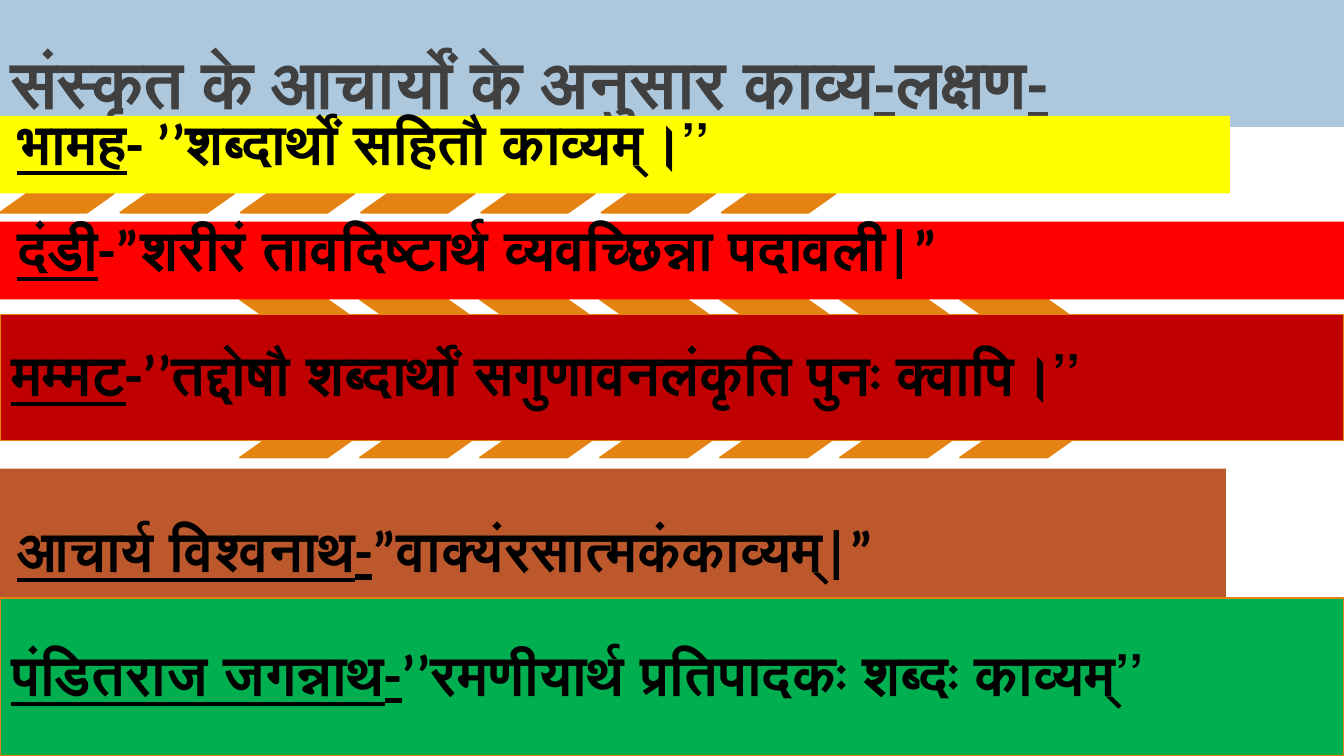
from pptx import Presentation
from pptx.dml.color import RGBColor
from pptx.enum.shapes import MSO_SHAPE as SHAPE
from pptx.enum.text import MSO_ANCHOR as ANCHOR, MSO_AUTO_SIZE as AUTOSIZE, PP_ALIGN as ALIGN
from pptx.util import Inches, Pt

W, H = Inches(13.33), Inches(7.5)
FONT = "Calibri"
COLORS = {
    "title_bg": "ADC8DD", "title": "404040", "text": "000000", "accent": "E48312",
    "yellow": "FFFF00", "red": "FF0000", "maroon": "C00000",
    "rust": "BD582C", "green": "00B050",
}

# Definitions: author, quotation, top %, width %, height %, colour, outlined
BARS = [
    ("भामह", "- ’’शब्दार्थों सहितौ काव्यम्।’’", 15.33, 91.52, 10.27, "yellow", False),
    ("दंडी", "-”शरीरं तावदिष्टार्थ व्यवच्छिन्ना पदावली|”", 29.33, 100, 10.27, "red", False),
    ("मम्मट", "-’’तद्दोषौ शब्दार्थों सगुणावनलंकृति पुनः क्वापि।’’", 41.6, 100, 16.67, "maroon", True),
    ("आचार्य विश्वनाथ-", "”वाक्यंरसात्मकंकाव्यम्|”", 62, 91.22, 17.47, "rust", False),
    ("पंडितराज जगन्नाथ-", "’’रमणीयार्थ प्रतिपादकः शब्दः काव्यम्’’", 79.07, 100, 20.93, "green", True),
]


def color(name):
    return RGBColor.from_string(COLORS[name])


def box(x, y, w, h):
    """Turn percentages of the slide into lengths."""
    return int(W * x / 100), int(H * y / 100), int(W * w / 100), int(H * h / 100)


def add_block(slide, kind, area, fill, outlined):
    sp = slide.shapes.add_shape(kind, *box(*area))
    sp.shadow.inherit = False
    sp.fill.solid()
    sp.fill.fore_color.rgb = color(fill)
    if outlined:
        sp.line.color.rgb = color("accent")
        sp.line.width = Pt(1.25)
    else:
        sp.line.fill.background()
    return sp


def add_run(p, text, size, ink, underline):
    r = p.add_run()
    r.text = text
    r.font.name, r.font.size = FONT, Pt(size)
    r.font.bold, r.font.underline = True, underline
    r.font.color.rgb = color(ink)
    return r


def set_title(slide, text):
    sp = slide.shapes.title
    sp.left, sp.top, sp.width, sp.height = box(0, 0, 100, 16.8)
    sp.fill.solid()
    sp.fill.fore_color.rgb = color("title_bg")
    tf = sp.text_frame
    tf.auto_size, tf.word_wrap = AUTOSIZE.NONE, True
    tf.vertical_anchor = ANCHOR.BOTTOM
    p = tf.paragraphs[0]
    p.alignment, p.line_spacing = ALIGN.LEFT, 0.85
    r = add_run(p, text, 48, "title", True)
    r.font._element.set("spc", "-50")  # tighter letters


def add_bar(slide, author, quotation, top, width, height, fill, outlined):
    sp = add_block(slide, SHAPE.RECTANGLE, (0, top, width, height), fill, outlined)
    tf = sp.text_frame
    tf.word_wrap = True
    tf.vertical_anchor = ANCHOR.MIDDLE if outlined else ANCHOR.BOTTOM
    inset = Inches(0.11 if outlined else 0.17)
    tf.margin_left = tf.margin_right = tf.margin_top = tf.margin_bottom = inset
    p = tf.paragraphs[0]
    p.alignment, p.line_spacing = ALIGN.LEFT, 0.9
    add_run(p, author, 40, "text", True)
    add_run(p, quotation, 40, "text", False)


def add_ornaments(slide, kind, area, pitch, slant):
    x, y, w, h = area
    for i in range(7):
        sp = add_block(slide, kind, (x + i * pitch, y, w, h), "accent", True)
        sp.adjustments[0] = slant


def main():
    prs = Presentation()
    prs.slide_width, prs.slide_height = W, H
    slide = prs.slides.add_slide(prs.slide_layouts[5])
    set_title(slide, "संस्कृत के आचार्यों के अनुसार काव्य-लक्षण-")

    # Ornament rows, partly covered by the bars
    add_ornaments(slide, SHAPE.PARALLELOGRAM, (0, 25.6, 8.48, 2.53), 8.95, 1.41)
    add_ornaments(slide, SHAPE.CHEVRON, (17.85, 39.6, 14.85, 20.93), 8.93, 0.71)

    # Definition bars
    for bar in BARS:
        add_bar(slide, *bar)
    prs.save("out.pptx")


if __name__ == "__main__":
    main()
